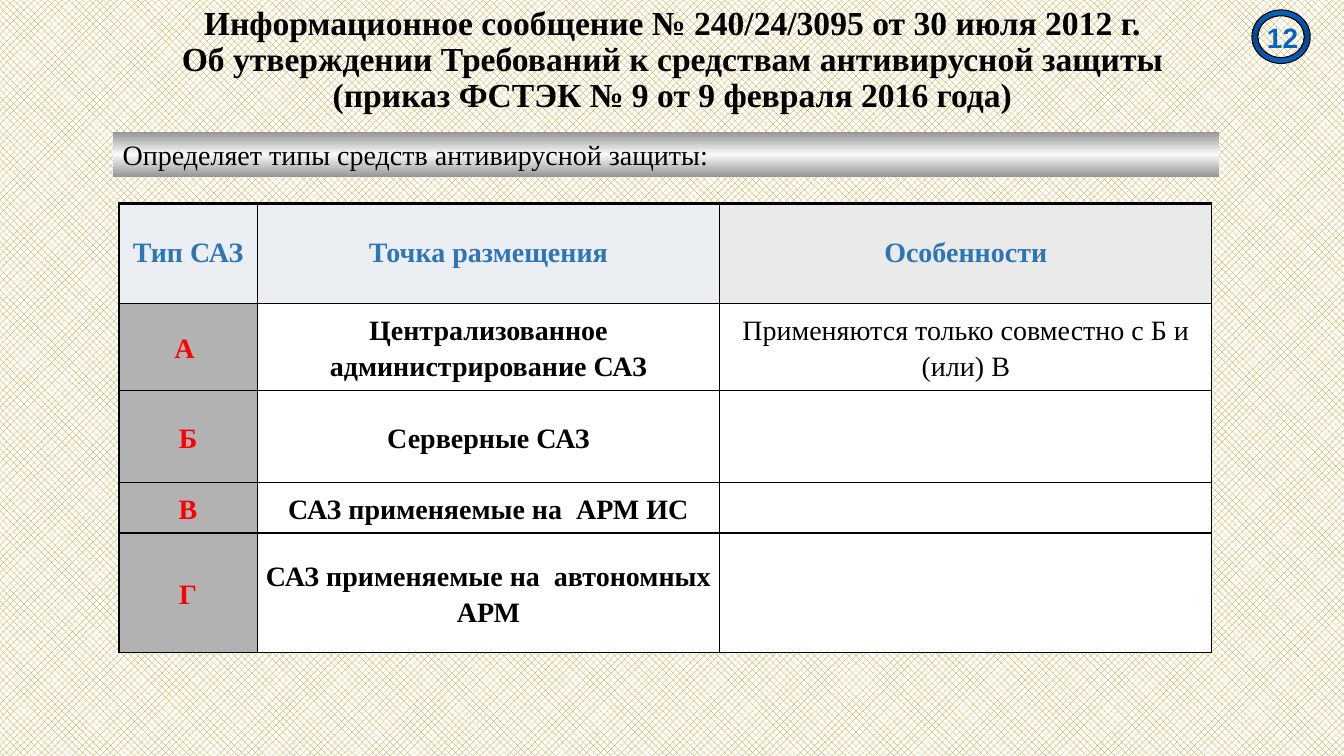
from copy import deepcopy
from dataclasses import dataclass

from lxml import etree
from pptx import Presentation
from pptx import util as u
from pptx.dml.color import RGBColor
from pptx.enum import dml, shapes, text
from pptx.oxml.ns import qn

COLORS = {
    "black": "000000", "white": "FFFFFF", "gold": "BF9000",
    "band_edge": "969696", "band_mid": "FAFAFA",
    "ring_edge": "0563C1", "ring_mid": "04478A",
    "head_blue": "EBEEF2", "head_gray": "EAEAEA", "head_text": "2E75B6",
    "type_fill": "B2B2B2", "type_text": "FF0000",
}
SERIF = "Times New Roman"
CENTER = text.PP_ALIGN.CENTER
MIDDLE = text.MSO_ANCHOR.MIDDLE


@dataclass(frozen=True)
class Box:
    left: float
    top: float
    width: float
    height: float

    def emu(self) -> tuple:
        return tuple(u.Cm(v) for v in (self.left, self.top, self.width, self.height))


@dataclass(frozen=True)
class Style:
    color: str = "black"
    size: int = 20
    bold: bool = True
    font: str = SERIF
    align: text.PP_ALIGN = CENTER
    spacing: float = 1.0


@dataclass(frozen=True)
class CellLook:
    fill: str
    style: Style
    margin: float = 0.18


BODY = Style(spacing=1.15)
HEAD = Style("head_text")
HEAD_LOOKS = [CellLook(fill, HEAD, 0) for fill in ("head_blue", "head_blue", "head_gray")]
BODY_LOOKS = [
    CellLook("type_fill", Style("type_text", spacing=1.15)),
    CellLook("white", BODY),
    CellLook("white", Style(bold=False, spacing=1.15)),
]

TITLE = [
    "Информационное сообщение № 240/24/3095 от 30 июля 2012 г.",
    "Об утверждении Требований к средствам антивирусной защиты",
    "(приказ ФСТЭК № 9 от 9 февраля 2016 года)",
]
COL_WIDTHS = [3.48, 11.66, 12.4]
ROW_HEIGHTS = [2.51, 2.21, 2.31, 1.27, 3.02]
ROWS = [
    ["Тип САЗ", "Точка размещения", "Особенности"],
    ["А ", "Централизованное администрирование САЗ",
     "Применяются только совместно с Б и (или) В"],
    ["Б", "Серверные САЗ", ""],
    ["В", "САЗ применяемые на  АРМ ИС", ""],
    ["Г", "САЗ применяемые на  автономных АРМ", ""],
]


def rgb(name: str) -> RGBColor:
    return RGBColor.from_string(COLORS[name])


def set_attrs(obj, values: dict) -> None:
    for name, value in values.items():
        setattr(obj, name, value)


def write(tf, lines: list[str], style: Style) -> None:
    for i, line in enumerate(lines):
        p = tf.add_paragraph() if i else tf.paragraphs[0]
        set_attrs(p, {"alignment": style.align, "line_spacing": style.spacing})
        r = p.add_run()
        r.text = line
        set_attrs(r.font, {"name": style.font, "size": u.Pt(style.size), "bold": style.bold})
        r.font.color.rgb = rgb(style.color)


def fill_mirrored(sp, edge: str, middle: str) -> None:
    """Vertical gradient with the same colour at both ends."""
    sp.fill.gradient()
    sp.fill.gradient_angle = 270
    stops = sp._element.spPr.find(qn("a:gradFill")).find(qn("a:gsLst"))
    stops.insert(1, deepcopy(stops[0]))
    for stop, name, place in zip(sp.fill.gradient_stops, (edge, middle, edge), (0, 0.5, 1)):
        stop.color.rgb = rgb(name)
        stop.position = place


def add_preset(slide, kind, box: Box, edge: str, middle: str):
    sp = slide.shapes.add_shape(kind, *box.emu())
    sp.shadow.inherit = False
    fill_mirrored(sp, edge, middle)
    return sp


def add_text(slide, box: Box, lines: list[str], style: Style, margin: float = 0) -> None:
    tf = slide.shapes.add_textbox(*box.emu()).text_frame
    set_attrs(tf, {"word_wrap": True, "vertical_anchor": MIDDLE,
                   "margin_left": u.Cm(margin), "margin_right": u.Cm(margin),
                   "margin_top": 0, "margin_bottom": 0})
    write(tf, lines, style)


def set_borders(cell, widths: dict[str, float]) -> None:
    tc_pr = cell._tc.get_or_add_tcPr()
    for i, (side, width) in enumerate(widths.items()):
        ln = etree.Element(qn(f"a:ln{side}"), w=str(u.Pt(width)))
        fill = etree.SubElement(ln, qn("a:solidFill"))
        etree.SubElement(fill, qn("a:srgbClr"), val=COLORS["black"])
        tc_pr.insert(i, ln)


def add_types_table(slide, box: Box) -> None:
    table = slide.shapes.add_table(len(ROWS), len(COL_WIDTHS), *box.emu()).table
    set_attrs(table, {"first_row": False, "horz_banding": False})
    for column, width in zip(table.columns, COL_WIDTHS):
        column.width = u.Cm(width)
    for i, (row, height) in enumerate(zip(table.rows, ROW_HEIGHTS)):
        row.height = u.Cm(height)
        for j, look in enumerate(BODY_LOOKS if i else HEAD_LOOKS):
            cell = row.cells[j]
            set_attrs(cell, {"vertical_anchor": MIDDLE,
                             "margin_left": u.Cm(look.margin),
                             "margin_right": u.Cm(look.margin),
                             "margin_top": 0, "margin_bottom": 0})
            cell.fill.solid()
            cell.fill.fore_color.rgb = rgb(look.fill)
            set_borders(cell, {"L": 1 if j else 2.25, "R": 1, "T": 1 if i else 2.25, "B": 1})
            if ROWS[i][j]:
                write(cell.text_frame, [ROWS[i][j]], look.style)


def main() -> None:
    prs = Presentation()
    set_attrs(prs, {"slide_width": u.Cm(33.87), "slide_height": u.Cm(19.05)})
    slide = prs.slides.add_slide(prs.slide_layouts[6])

    fill = slide.background.fill
    fill.patterned()
    fill.pattern = dml.MSO_PATTERN.PERCENT_50
    fill.fore_color.rgb = rgb("gold")
    fill.back_color.rgb = rgb("white")

    band = add_preset(slide, shapes.MSO_SHAPE.RECTANGLE, Box(2.84, 3.33, 27.89, 1.12),
                      "band_edge", "band_mid")
    band.line.fill.background()
    write(band.text_frame, ["Определяет типы средств антивирусной защиты:"],
          Style(bold=False, align=text.PP_ALIGN.LEFT))

    add_types_table(slide, Box(3, 5.13, sum(COL_WIDTHS), sum(ROW_HEIGHTS)))
    add_text(slide, Box(2.34, 0.36, 29.21, 2.34), TITLE, Style(size=24, spacing=0.9), 0.25)

    ring = add_preset(slide, shapes.MSO_SHAPE.DONUT, Box(31.55, 0.25, 1.47, 1.35),
                      "ring_edge", "ring_mid")
    ring.adjustments[0] = 0.11
    ring.line.color.rgb = rgb("black")
    ring.line.width = u.Pt(0.75)
    add_text(slide, Box(31.93, 0.51, 0.97, 0.86), ["12"],
             Style("ring_edge", font="Arial", align=text.PP_ALIGN.LEFT))

    prs.save("out.pptx")


if __name__ == "__main__":
    main()
